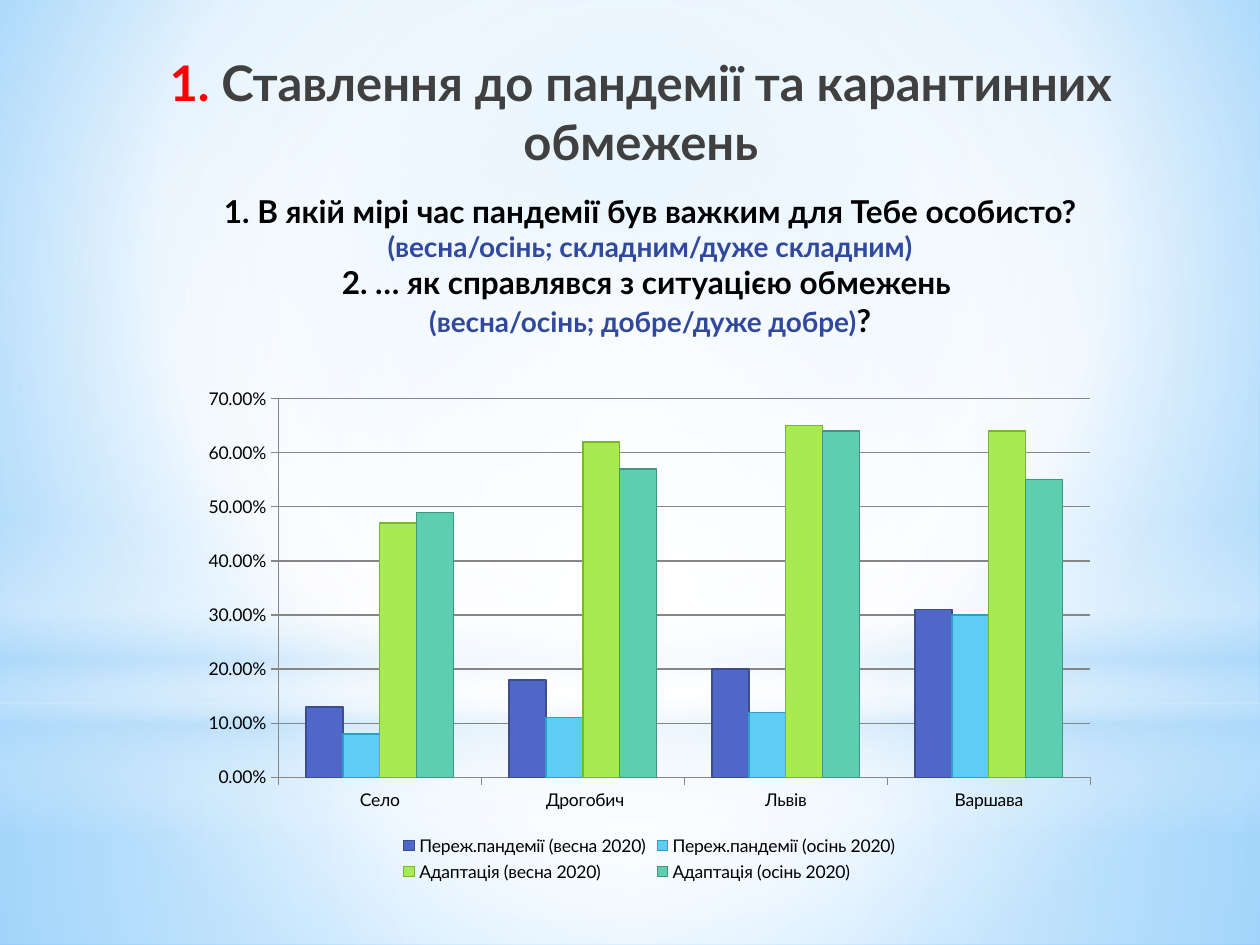
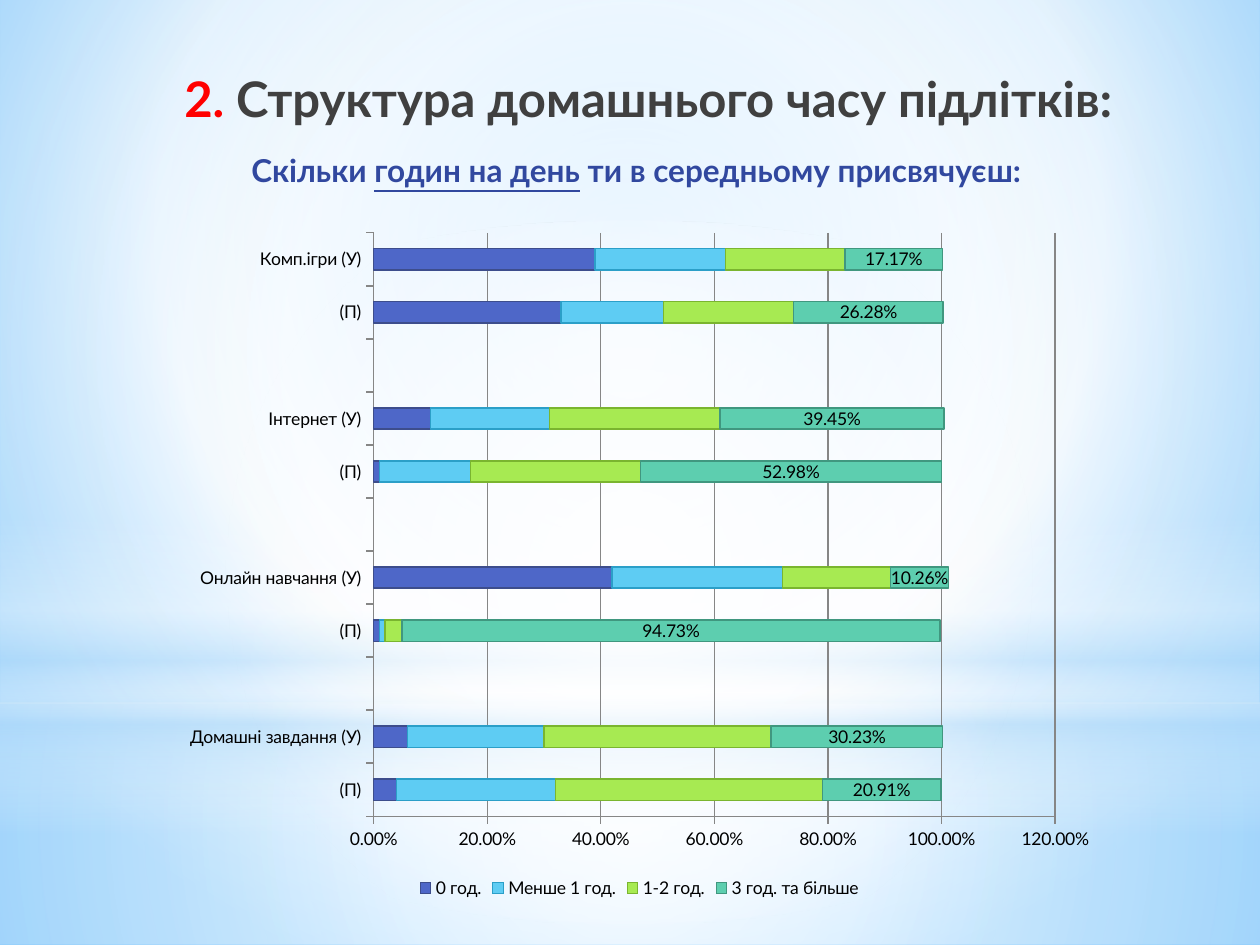
import colorsys

from lxml import etree
from pptx import Presentation
from pptx import util as u
from pptx.chart.data import CategoryChartData
from pptx.dml.color import RGBColor
from pptx.enum import chart as charts, shapes, text
from pptx.oxml.ns import qn

FONT = "Lato"
COLORS = {
    "sky": "9ED5FF", "deep_sky": "5BB9FF", "haze": "B4DCFA", "white": "FFFFFF",
    "red": "FF0000", "grey": "404040", "black": "000000", "blue": "31489F",
    "axis": "868686",
}
SERIES_COLORS = ["4E67C8", "5ECCF3", "A7EA52", "5DCEAF"]
CENTRE = (50, 50, 50, 50)


def rgb(name):
    return RGBColor.from_string(COLORS.get(name, name))


def darker(color):
    red, green, blue = (part / 255 for part in rgb(color))
    hue, light, strength = colorsys.rgb_to_hls(red, green, blue)
    parts = colorsys.hls_to_rgb(hue, light * 0.72, strength * 0.75)
    return RGBColor(*(round(part * 255) for part in parts))


def set_gradient(fill, owner, stops, focus=None):
    fill.gradient()
    gradient = next(owner.iter(qn("a:gradFill")))
    for child in list(gradient):
        gradient.remove(child)
    stop_list = etree.SubElement(gradient, qn("a:gsLst"))
    for place, color, opacity in stops:
        stop = etree.SubElement(stop_list, qn("a:gs"), pos=str(place * 1000))
        tone = etree.SubElement(stop, qn("a:srgbClr"), val=COLORS[color])
        if opacity < 100:
            etree.SubElement(tone, qn("a:alpha"), val=str(opacity * 1000))
    if focus:
        circle = etree.SubElement(gradient, qn("a:path"), path="circle")
        edges = {side: str(value * 1000) for side, value in zip("ltrb", focus)}
        etree.SubElement(circle, qn("a:fillToRect"), **edges)
    else:
        etree.SubElement(gradient, qn("a:lin"), ang="5400000", scaled="0")


def add_glow(page, master, order, kind, top, height, stops, focus):
    glow = page.shapes.add_shape(kind, 0, u.Inches(top), u.Inches(10), u.Inches(height))
    glow.shadow.inherit = False
    glow.line.fill.background()
    set_gradient(glow.fill, glow.element, stops, focus)
    master.shapes.element.insert(2 + order, glow.element)


def paint_master(page, master):
    set_gradient(master.background.fill, master.element,
                 [(0, "sky", 100), (60, "white", 100), (100, "deep_sky", 100)],
                 (20, 10, 20, 60))
    rectangle, oval = shapes.MSO_SHAPE.RECTANGLE, shapes.MSO_SHAPE.OVAL
    glows = [
        (rectangle, 5.58, 1.92,
         [(0, "white", 91), (37, "white", 76), (100, "haze", 79)], CENTRE),
        (rectangle, 0, 5.58,
         [(0, "white", 89), (48, "white", 62), (100, "haze", 79)], CENTRE),
        (rectangle, 4.12, 2.5,
         [(0, "white", 0), (29, "white", 30), (45, "haze", 40),
          (55, "white", 26), (65, "haze", 60), (100, "white", 0)], None),
        (oval, 1.75, 5.58, [(0, "white", 100), (56, "white", 0)], CENTRE),
    ]
    for order, glow in enumerate(glows):
        add_glow(page, master, order, *glow)


def place(box, left, top, width, height):
    box.left, box.top = u.Inches(left), u.Inches(top)
    box.width, box.height = u.Inches(width), u.Inches(height)
    frame = box.text_frame
    frame.word_wrap = True
    frame.auto_size = text.MSO_AUTO_SIZE.NONE
    frame.vertical_anchor = text.MSO_ANCHOR.TOP
    return frame


def write_paragraph(para, spans):
    para.alignment = text.PP_ALIGN.CENTER
    para.space_before = u.Pt(0)
    para.font.name = FONT
    para.font.bold = True
    for words, size, color, *underlined in spans:
        span = para.add_run()
        span.text = words
        span.font.name = FONT
        span.font.bold = True
        span.font.size = u.Pt(size)
        span.font.color.rgb = rgb(color)
        if underlined:
            span.font.underline = True


def write_title(page, left, top, number, words):
    frame = place(page.shapes.title, left, top, 8.5, 0.75)
    frame.margin_left = u.Inches(0.15)
    frame.margin_top = u.Inches(0.08)
    write_paragraph(frame.paragraphs[0],
                    [(number, 28, "red"), (" " + words, 28, "grey")])


def write_questions(page, left, top, height, questions):
    frame = place(page.placeholders[1], left, top, 7.72, height)
    for index, spans in enumerate(questions):
        para = frame.add_paragraph() if index else frame.paragraphs[0]
        write_paragraph(para, spans)
        properties = para._p.get_or_add_pPr()
        properties.set("marL", "0")
        properties.set("indent", "0")
        etree.SubElement(properties, qn("a:buNone"))
        default = properties.find(qn("a:defRPr"))
        if default is not None:
            properties.append(default)


def add_bars(page, kind, area, categories, series, top_value, step):
    data = CategoryChartData(number_format="0.00%")
    data.categories = categories
    for name, values in series:
        data.add_series(name, values)
    frame = page.shapes.add_chart(kind, *(u.Inches(length) for length in area), data)
    chart = frame.chart
    chart.has_title = False
    chart.font.name = FONT
    chart.font.size = u.Pt(10)
    chart.font.color.rgb = rgb("black")
    chart.has_legend = True
    chart.legend.position = charts.XL_LEGEND_POSITION.BOTTOM
    chart.legend.include_in_layout = False

    values = chart.value_axis
    values.minimum_scale, values.maximum_scale = 0, top_value
    values.major_unit = step
    values.has_major_gridlines = True
    values.major_gridlines.format.line.color.rgb = rgb("axis")
    values.tick_labels.number_format = "0.00%"
    values.tick_labels.number_format_is_linked = False
    for axis in (values, chart.category_axis):
        axis.major_tick_mark = charts.XL_TICK_MARK.OUTSIDE
        axis.format.line.color.rgb = rgb("axis")

    plot = chart.plots[0]
    plot.gap_width = 150
    plot.vary_by_categories = False
    for bars, color in zip(plot.series, SERIES_COLORS):
        bars.invert_if_negative = False
        bars.format.fill.solid()
        bars.format.fill.fore_color.rgb = rgb(color)
        bars.format.line.color.rgb = darker(color)
        bars.format.line.width = u.Pt(0.75)
    return plot


def label_values(bars):
    labels = bars.data_labels
    labels.show_value = True
    labels.number_format = "0.00%"
    labels.number_format_is_linked = False
    labels.font.name = FONT
    labels.font.size = u.Pt(10)


def build_attitude_page(page):
    write_title(page, 0.81, 0.34, "1.", "Ставлення до пандемії та карантинних обмежень")
    write_questions(page, 1.3, 1.47, 1.62, [
        [("1. В якій мірі час пандемії був важким для Тебе особисто? ", 18, "black"),
         ("(весна/осінь; складним/дуже складним)", 16, "blue")],
        [("2. … як справлявся з ситуацією обмежень ", 18, "black")],
        [("(весна/осінь; добре/дуже добре)", 16, "blue"), ("?", 18, "black")],
    ])
    add_bars(page, charts.XL_CHART_TYPE.COLUMN_CLUSTERED, (1.51, 3, 7.29, 4.04),
             ["Село", " Дрогобич", "Львів", "Варшава"], [
                 ("Переж.пандемії (весна 2020)", [0.13, 0.18, 0.2, 0.31]),
                 ("Переж.пандемії (осінь 2020)", [0.08, 0.11, 0.12, 0.3]),
                 ("Адаптація (весна 2020)", [0.47, 0.62, 0.65, 0.64]),
                 ("Адаптація (осінь 2020)", [0.49, 0.57, 0.64, 0.55]),
             ], 0.7, 0.1)


def build_home_time_page(page):
    write_title(page, 0.87, 0.46, "2.", "Структура домашнього часу підлітків:")
    write_questions(page, 1.22, 1.15, 0.4, [
        [("Скільки ", 18, "blue"), ("годин на день", 18, "blue", True),
         (" ти в середньому присвячуєш: ", 18, "blue")],
    ])
    categories = ["(П)", "Домашні завдання (У)", "", "(П)", "Онлайн навчання (У)", "",
                  "(П)", "Інтернет (У)", "", "(П)", "Комп.ігри (У)"]
    plot = add_bars(
        page, charts.XL_CHART_TYPE.BAR_STACKED, (1.36, 1.74, 7.43, 5.43), categories, [
            ("0 год.", [0.04, 0.06, None, 0.01, 0.42, None, 0.01, 0.1, None, 0.33, 0.39]),
            ("Менше 1 год.",
             [0.28, 0.24, None, 0.01, 0.3, None, 0.16, 0.21, None, 0.18, 0.23]),
            ("1-2 год.",
             [0.47, 0.4, None, 0.03, 0.19, None, 0.3, 0.3, None, 0.23, 0.21]),
            ("3 год. та більше",
             [0.2091, 0.3023, None, 0.9473, 0.1026, None,
              0.5298, 0.3945, None, 0.2628, 0.1717]),
        ], 1.2, 0.2)
    plot.overlap = 100
    label_values(plot.series[3])


def main():
    deck = Presentation()
    deck.slide_width, deck.slide_height = u.Inches(10), u.Inches(7.5)
    layout = deck.slide_layouts[1]
    attitude, home_time = (deck.slides.add_slide(layout) for _ in range(2))
    paint_master(attitude, deck.slide_master)
    build_attitude_page(attitude)
    build_home_time_page(home_time)
    deck.save("out.pptx")


if __name__ == "__main__":
    main()
